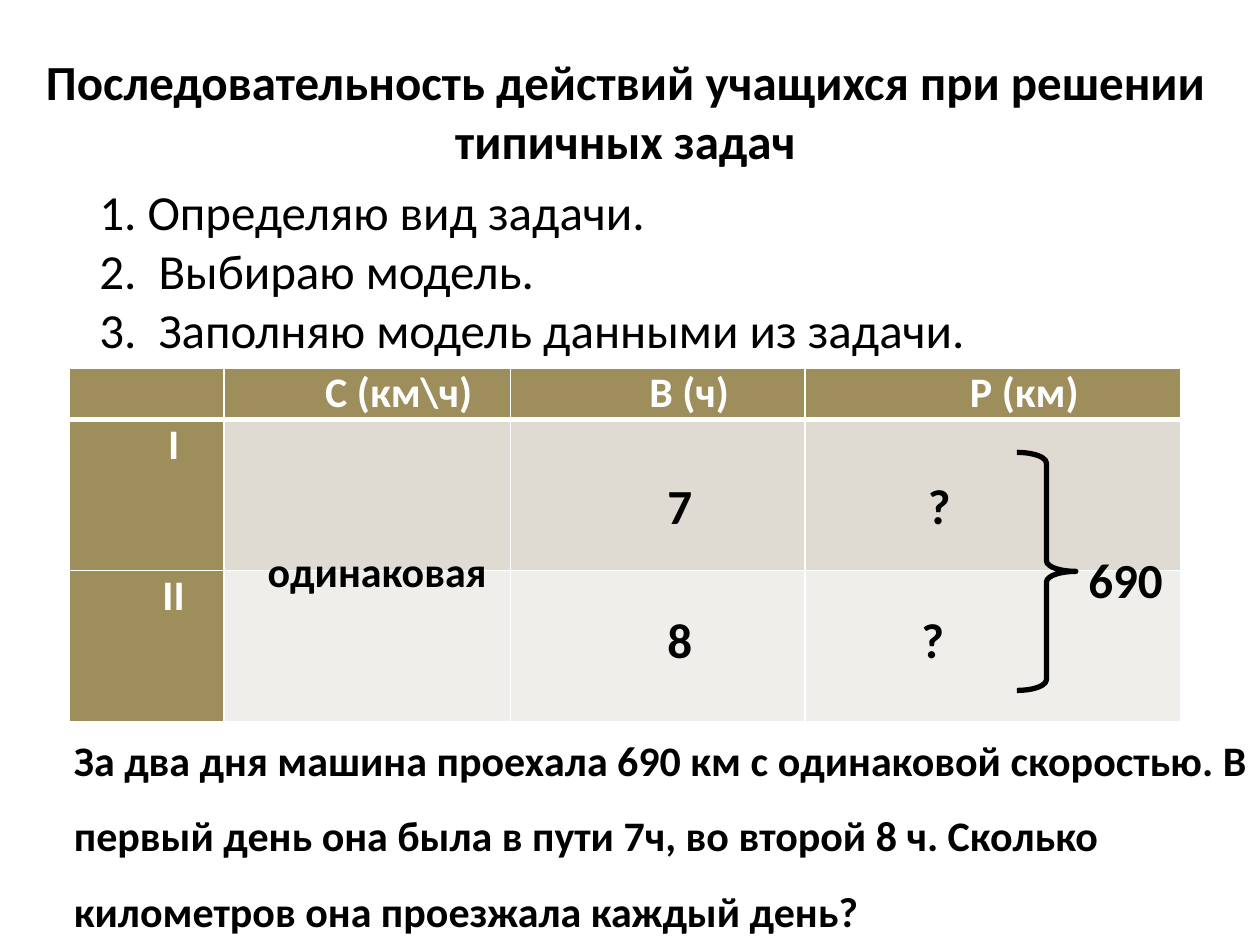
from lxml.etree import SubElement
from pptx import Presentation
from pptx.dml.color import RGBColor
from pptx.enum.shapes import MSO_SHAPE
from pptx.enum.text import MSO_ANCHOR, MSO_AUTO_SIZE, PP_ALIGN
from pptx.oxml.ns import qn
from pptx.util import Cm, Pt

BLACK = RGBColor(0x00, 0x00, 0x00)
WHITE = RGBColor(0xFF, 0xFF, 0xFF)
OLIVE = RGBColor(0x9E, 0x8E, 0x5C)
SAND = RGBColor(0xDF, 0xDB, 0xD2)
IVORY = RGBColor(0xF0, 0xEE, 0xEA)


class TaskSlide:
    font_name = "Calibri"

    def __init__(self, slide):
        self.slide = slide

    def place(self, shape, left, top, width, height):
        shape.left, shape.top = Cm(left), Cm(top)
        shape.width, shape.height = Cm(width), Cm(height)

    def style(self, paragraph, size, bold=True, color=BLACK):
        for run in paragraph.runs:
            run.font.name = self.font_name
            run.font.size = Pt(size)
            run.font.bold = bold
            run.font.color.rgb = color

    def title(self, text, *box):
        heading = self.slide.shapes.title
        self.place(heading, *box)
        frame = heading.text_frame
        frame.text = text
        frame.auto_size = MSO_AUTO_SIZE.NONE
        frame.vertical_anchor = MSO_ANCHOR.MIDDLE
        frame.paragraphs[0].alignment = PP_ALIGN.CENTER
        self.style(frame.paragraphs[0], 28)

    def numbered_list(self, steps, *box):
        body = self.slide.placeholders[1]
        self.place(body, *box)
        frame = body.text_frame
        frame.text = "\n".join(steps)
        frame.auto_size = MSO_AUTO_SIZE.NONE
        for paragraph in frame.paragraphs:
            properties = paragraph._p.get_or_add_pPr()
            properties.set("marL", str(Cm(0.97)))
            properties.set("indent", str(-Cm(0.97)))
            paragraph.space_before = Pt(0)
            SubElement(properties, qn("a:buFont"), typeface="+mj-lt")
            SubElement(properties, qn("a:buAutoNum"), type="arabicPeriod")
            self.style(paragraph, 28, bold=False)

    def text(self, text, *box, size=28, align=PP_ALIGN.CENTER, spacing=None):
        label = self.slide.shapes.add_textbox(*map(Cm, box))
        frame = label.text_frame
        frame.word_wrap = True
        frame.text = text
        paragraph = frame.paragraphs[0]
        paragraph.alignment = align
        paragraph.line_spacing = spacing
        self.style(paragraph, size)

    def cell(self, cell, text, fill, bottom):
        cell.margin_left = cell.margin_right = Cm(0.2)
        cell.margin_top = cell.margin_bottom = 0
        properties = cell._tc.get_or_add_tcPr()
        for side, width in (("lnL", 1), ("lnR", 1), ("lnT", 1), ("lnB", bottom)):
            border = SubElement(properties, qn(f"a:{side}"), w=str(Pt(width)))
            paint = SubElement(border, qn("a:solidFill"))
            SubElement(paint, qn("a:srgbClr"), val=str(WHITE))
        cell.fill.solid()
        cell.fill.fore_color.rgb = fill
        if text:
            cell.text_frame.text = text
            paragraph = cell.text_frame.paragraphs[0]
            paragraph.alignment = PP_ALIGN.CENTER
            paragraph._p.get_or_add_pPr().set("marL", str(Cm(1.27)))
            self.style(paragraph, 24, color=WHITE)

    def table(self, rows, left, top, widths, heights, row_fills):
        table = self.slide.shapes.add_table(
            len(heights), len(widths), Cm(left), Cm(top),
            Cm(sum(widths)), Cm(sum(heights))).table
        for column, width in zip(table.columns, widths):
            column.width = Cm(width)
        for r, (texts, height) in enumerate(zip(rows, heights)):
            table.rows[r].height = Cm(height)
            for c, text in enumerate(texts):
                fill = OLIVE if c == 0 else row_fills[r]
                self.cell(table.cell(r, c), text, fill, 3 if r == 0 else 1)

    def brace(self, *box):
        brace = self.slide.shapes.add_shape(MSO_SHAPE.RIGHT_BRACE, *map(Cm, box))
        brace.shadow.inherit = False
        brace.adjustments[0] = 0.18
        brace.fill.background()
        brace.line.color.rgb = BLACK
        brace.line.width = Pt(3)


def main():
    presentation = Presentation()
    presentation.slide_width, presentation.slide_height = Cm(25.4), Cm(19.05)
    page = TaskSlide(presentation.slides.add_slide(presentation.slide_layouts[1]))

    page.title("Последовательность действий учащихся при решении типичных задач",
               0.3, 0.91, 24.61, 2.64)
    page.numbered_list(["Определяю вид задачи.", " Выбираю модель.",
                        " Заполняю модель данными из задачи."],
                       1.75, 3.53, 22.4, 3.84)
    page.table([["", "С (км\\ч)", "В (ч)", "Р (км)"],
                ["I ", "", "", ""],
                ["II ", "", "", ""]],
               1.4, 7.42, [3.12, 5.77, 5.94, 7.57], [1.02, 3.05, 3.05],
               [OLIVE, SAND, IVORY])
    page.brace(20.5, 9.12, 1.19, 4.8)
    page.text("одинаковая", 4.8, 10.87, 5.61, 1.3, size=24)
    page.text("За два дня машина проехала 690 км с одинаковой скоростью. "
              "В первый день она была в пути 7ч, во второй 8 ч. "
              "Сколько километров она проезжала каждый день?",
              1.24, 14.17, 24.16, 4.88, size=24, align=PP_ALIGN.LEFT, spacing=1.5)
    page.text("690", 21.69, 10.95, 2.21, 1.45, align=PP_ALIGN.LEFT)
    for value, left, top in (("7", 12.6, 9.47), ("8", 12.6, 12.17),
                             ("?", 17.83, 9.47), ("?", 17.7, 12.17)):
        page.text(value, left, top, 2.21, 1.45)

    presentation.save("out.pptx")


if __name__ == "__main__":
    main()
